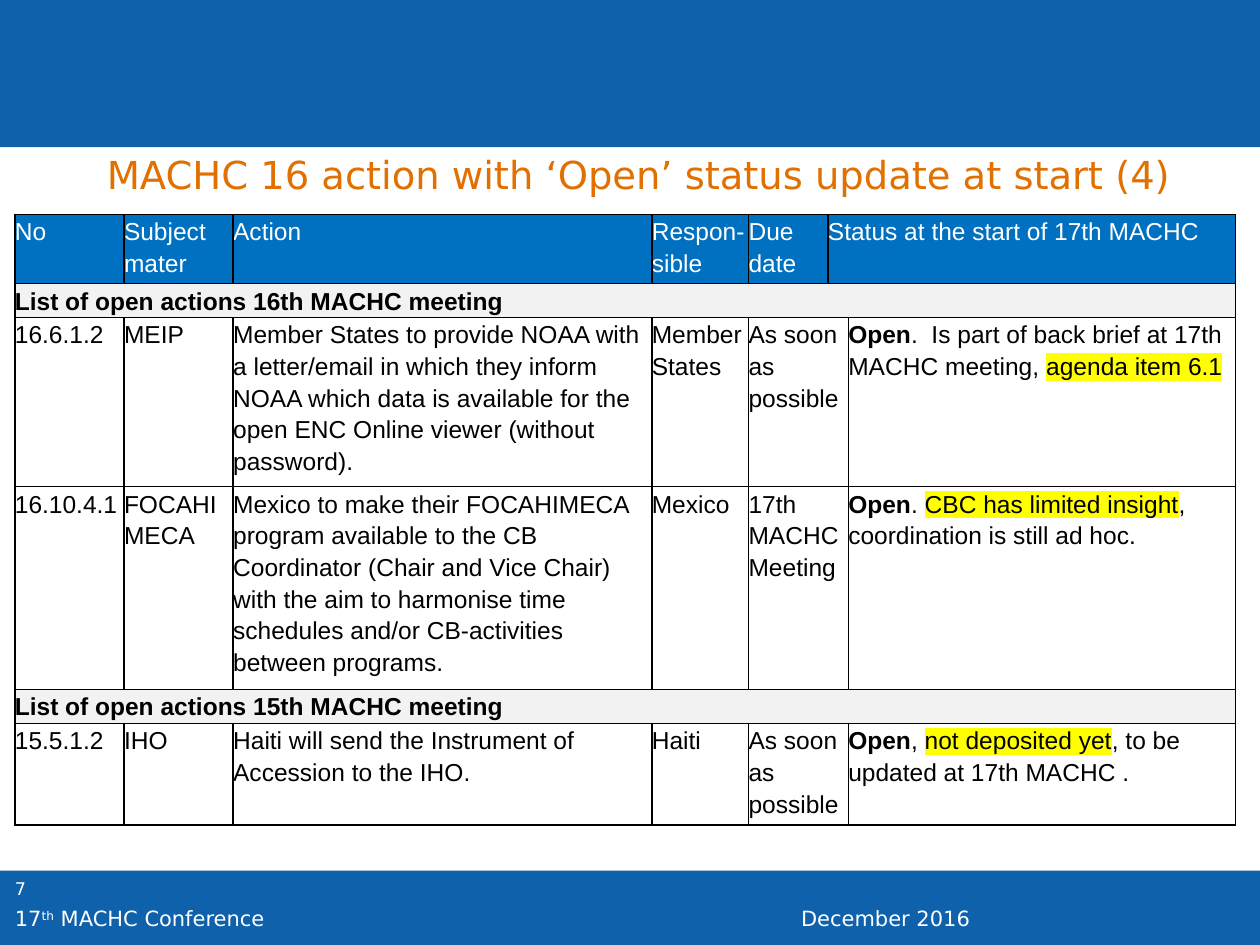
from collections import namedtuple
from dataclasses import dataclass

from lxml.etree import SubElement
from pptx import Presentation
from pptx.dml.color import RGBColor
from pptx.enum.shapes import MSO_SHAPE
from pptx.enum.text import MSO_ANCHOR, PP_ALIGN
from pptx.oxml import parse_xml
from pptx.oxml.ns import nsdecls, qn
from pptx.util import Cm, Pt

Box = namedtuple("Box", "left top width height")


@dataclass(frozen=True)
class Theme:
    band: str = "0E61AA"
    title: str = "E17000"
    header: str = "0070C0"
    section: str = "F2F2F2"
    white: str = "FFFFFF"
    black: str = "000000"
    highlight: str = "FFFF00"
    display_font: str = "DejaVu Sans"
    table_font: str = "Arial"
    title_size: int = 22
    table_size: int = 14
    footer_size: int = 12
    number_size: int = 10
    border_width: int = 1


THEME = Theme()
COLUMN_WIDTHS = (2.2, 2.2, 8.44, 1.95, 1.6, 0.41, 7.81)
ROW_HEIGHTS = (1.4, 0.68, 3.41, 4.09, 0.68, 2.03)
HEADINGS = ("No", "Subject mater", "Action", "Respon-sible", "Due date",
            "Status at the start of 17th MACHC")
# A status is a list of (text, style) runs.
SECTIONS = (
    ("List of open actions 16th MACHC meeting", (
        ("16.6.1.2", "MEIP",
         "Member States to provide NOAA with a letter/email in which they inform "
         "NOAA which data is available for the open ENC Online viewer (without password).",
         "Member States", "As soon as possible",
         [("Open", "bold"), (".  Is part of back brief at 17th MACHC meeting, ", ""),
          ("agenda item 6.1", "highlight")]),
        ("16.10.4.1", "FOCAHIMECA",
         "Mexico to make their FOCAHIMECA program available to the CB Coordinator "
         "(Chair and Vice Chair) with the aim to harmonise time schedules and/or "
         "CB-activities between programs.",
         "Mexico", "17th MACHC Meeting",
         [("Open", "bold"), (". ", ""), ("CBC has limited insight", "highlight"),
          (", coordination is still ad hoc.", "")]),
    )),
    ("List of open actions 15th MACHC meeting", (
        ("15.5.1.2", "IHO", "Haiti will send the Instrument of Accession to the IHO.",
         "Haiti", "As soon as possible",
         [("Open", "bold"), (", ", ""), ("not deposited yet", "highlight"),
          (", to be updated at 17th MACHC .", "")]),
    )),
)


def style_font(font, name, size, color):
    font.name = name
    font.size = Pt(size)
    font.color.rgb = RGBColor.from_string(color)


def add_runs(paragraph, runs):
    for text, style in runs:
        run = paragraph.add_run()
        run.text = text
        if style == "bold":
            run.font.bold = True
        elif style == "superscript":
            run._r.get_or_add_rPr().set("baseline", "30000")
        elif style == "highlight":
            mark = SubElement(run._r.get_or_add_rPr(), qn("a:highlight"))
            SubElement(mark, qn("a:srgbClr")).set("val", THEME.highlight)


def add_band(slide, box):
    band = slide.shapes.add_shape(MSO_SHAPE.RECTANGLE, *map(Cm, box))
    band.shadow.inherit = False
    band.fill.solid()
    band.fill.fore_color.rgb = RGBColor.from_string(THEME.band)
    band.line.fill.background()


def add_label(slide, box, runs, size):
    frame = slide.shapes.add_textbox(*map(Cm, box)).text_frame
    frame.word_wrap = True
    paragraph = frame.paragraphs[0]
    add_runs(paragraph, runs)
    style_font(paragraph.font, THEME.display_font, size, THEME.white)


def add_footer(slide, box):
    add_band(slide, box)
    left, top = box.left + 0.05, box.top + 0.58
    add_label(slide, Box(left, box.top + 0.03, 2, 1), [("7", "")], THEME.number_size)
    add_label(slide, Box(left, top, 11.1, 0.6),
              [("17", ""), ("th", "superscript"), (" MACHC Conference", "")],
              THEME.footer_size)
    add_label(slide, Box(box.left + 15.9, top, 9.5, 0.6),
              [("December 2016", "")], THEME.footer_size)


def place_title(slide, box, text):
    title = slide.shapes.title
    title.left, title.top, title.width, title.height = map(Cm, box)
    frame = title.text_frame
    frame.text = text
    frame.word_wrap = True
    frame.vertical_anchor = MSO_ANCHOR.TOP
    paragraph = frame.paragraphs[0]
    paragraph.alignment = PP_ALIGN.LEFT
    style_font(paragraph.font, THEME.display_font, THEME.title_size, THEME.title)


def style_cell(cell, fill):
    cell.margin_left = cell.margin_right = cell.margin_top = cell.margin_bottom = 0
    cell.fill.solid()
    cell.fill.fore_color.rgb = RGBColor.from_string(fill)
    properties = cell._tc.get_or_add_tcPr()
    for index, side in enumerate(("lnL", "lnR", "lnT", "lnB")):
        properties.insert(index, parse_xml(
            f'<a:{side} {nsdecls("a")} w="{Pt(THEME.border_width)}"><a:solidFill>'
            f'<a:srgbClr val="{THEME.black}"/></a:solidFill></a:{side}>'))


def write_cell(cell, content, color, bold=False):
    paragraph = cell.text_frame.paragraphs[0]
    paragraph.line_spacing = 1.15
    paragraph.space_after = Pt(2)
    add_runs(paragraph, [(content, "")] if isinstance(content, str) else content)
    style_font(paragraph.font, THEME.table_font, THEME.table_size, color)
    paragraph.font.bold = bold


def fill_row(table, row, contents, starts, fill, color, bold=False):
    """Write one row, each cell reaching to the column where the next one starts."""
    last_column = len(table.columns) - 1
    for column in range(last_column + 1):
        style_cell(table.cell(row, column), fill)
    ends = [start - 1 for start in starts[1:]] + [last_column]
    for content, start, end in zip(contents, starts, ends):
        cell = table.cell(row, start)
        if end > start:
            cell.merge(table.cell(row, end))
        write_cell(cell, content, color, bold)


def add_action_table(slide, box):
    table = slide.shapes.add_table(
        len(ROW_HEIGHTS), len(COLUMN_WIDTHS), *map(Cm, box)).table
    table.first_row = table.horz_banding = False
    for column, width in zip(table.columns, COLUMN_WIDTHS):
        column.width = Cm(width)
    for row, height in zip(table.rows, ROW_HEIGHTS):
        row.height = Cm(height)

    fill_row(table, 0, HEADINGS, range(6), THEME.header, THEME.white)
    row = 1
    for heading, actions in SECTIONS:
        fill_row(table, row, [heading], [0], THEME.section, THEME.black, bold=True)
        for row, action in enumerate(actions, row + 1):
            fill_row(table, row, action, (0, 1, 2, 3, 4, 6), THEME.white, THEME.black)
        row += 1


def main():
    presentation = Presentation()
    presentation.slide_width, presentation.slide_height = Cm(25.4), Cm(19.05)
    slide = presentation.slides.add_slide(presentation.slide_layouts[5])
    add_footer(slide, Box(0, 17.55, 25.4, 1.5))
    add_band(slide, Box(0, 0, 25.4, 2.97))
    place_title(slide, Box(1.9, 2.92, 22.33, 2.13),
                "MACHC 16 action with ‘Open’ status update at start (4)")
    add_action_table(slide, Box(0.3, 4.32, sum(COLUMN_WIDTHS), sum(ROW_HEIGHTS)))
    presentation.save("out.pptx")


if __name__ == "__main__":
    main()
